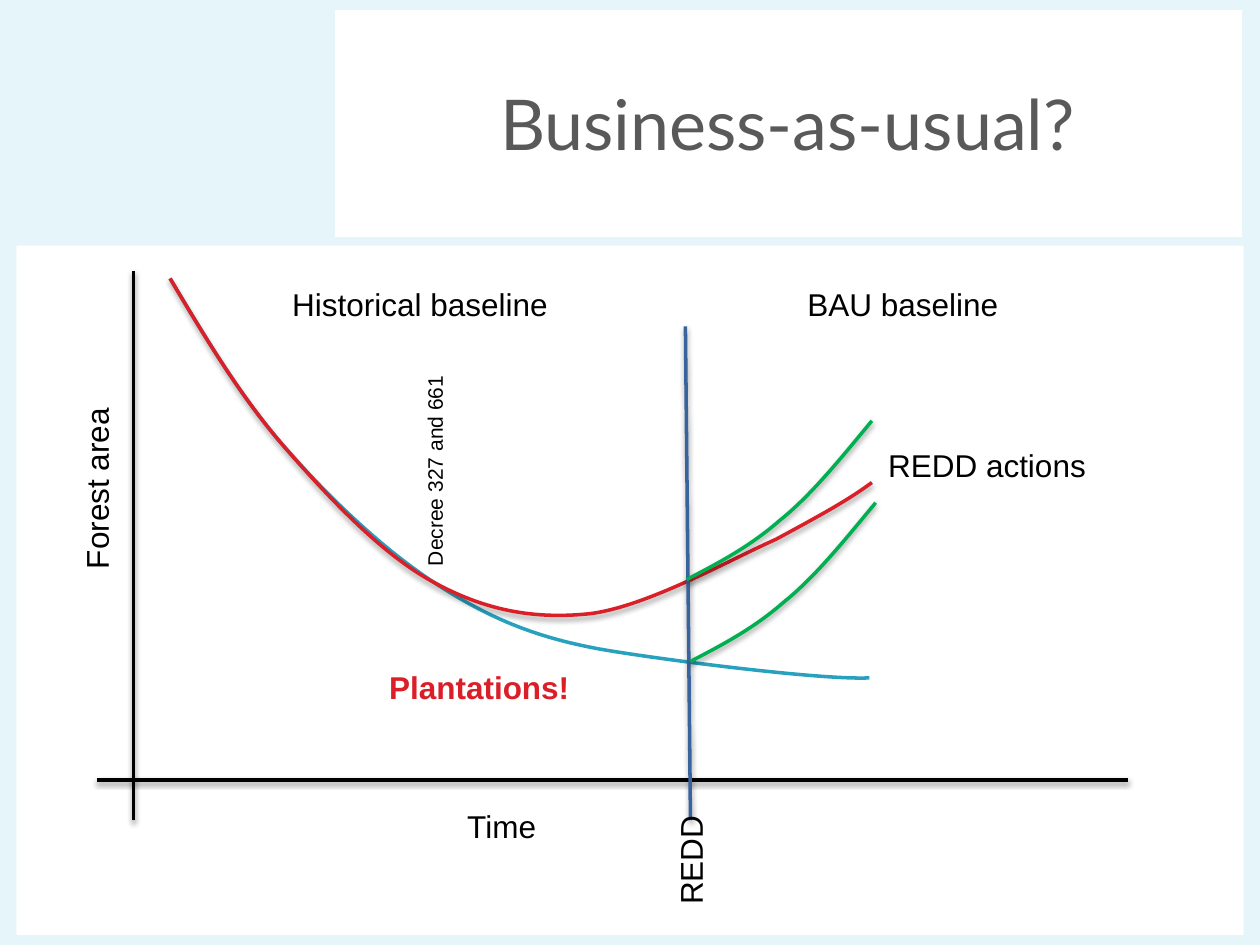
from lxml.etree import SubElement
from pptx import Presentation
from pptx.dml.color import RGBColor as Rgb
from pptx.enum.shapes import MSO_CONNECTOR as Connector, MSO_SHAPE as Preset
from pptx.enum.text import MSO_ANCHOR as Anchor, MSO_AUTO_SIZE as AutoSize, PP_ALIGN as Align
from pptx.oxml import parse_xml
from pptx.oxml.ns import nsdecls, qn
from pptx.util import Inches, Pt

THEME = {
    "background": Rgb.from_string("E5F5FA"),
    "panel": Rgb.from_string("FFFFFF"),
    "axis": Rgb.from_string("000000"),
    "forest": Rgb.from_string("28A1BE"),
    "plantation": Rgb.from_string("DA1F28"),
    "redd_start": Rgb.from_string("39639D"),
    "redd_action": Rgb.from_string("00B050"),
    "stroke": Pt(2),
    "title": ({"name": "Lato", "size": Pt(40)}, Rgb.from_string("595959")),
    "label": ({"name": "Arial", "size": Pt(18)}, Rgb.from_string("000000")),
    "note": ({"name": "Arial", "size": Pt(12)}, Rgb.from_string("000000")),
    "alert": ({"name": "Arial", "size": Pt(18), "bold": True}, Rgb.from_string("DA1F28")),
}
SHADOW = ('<a:outerShdw blurRad="40000" dist="20000" dir="5400000" rotWithShape="0">'
          '<a:srgbClr val="000000"><a:alpha val="38000"/></a:srgbClr></a:outerShdw>')

prs = Presentation()
prs.slide_width, prs.slide_height = Inches(10), Inches(7.5)
CELL = prs.slide_width / 100  # square grid: 100 columns by 75 rows


def grid(*cells):
    return [round(cell * CELL) for cell in cells]


def style_stroke(stroke, color, shadow=SHADOW):
    """Colour a line or curve and give it the soft shadow, or none."""
    stroke.line.color.rgb = THEME[color]
    stroke.line.width = THEME["stroke"]
    stroke._element.spPr.append(
        parse_xml(f'<a:effectLst {nsdecls("a")}>{shadow}</a:effectLst>'))


slide = prs.slides.add_slide(prs.slide_layouts[6])
slide.background.fill.solid()
slide.background.fill.fore_color.rgb = THEME["background"]
shapes = slide.shapes

for panel_box in [(1.3, 19.5, 97.4, 54.7), (26.6, 0.8, 72, 18)]:
    panel = shapes.add_shape(Preset.RECTANGLE, *grid(*panel_box))
    panel.shadow.inherit = False
    panel.fill.solid()
    panel.fill.fore_color.rgb = THEME["panel"]
    panel.line.fill.background()

# Each curve is a start point, then two control points and an end point per segment.
history = [(13.5, 22.1), (16.3, 26.8), (19.1, 31.5), (22.6, 35.5)]
forest_decline = history + [
    (26.1, 39.5), (30.3, 43.5), (34.4, 46.2),
    (38.4, 48.8), (41.9, 50.4), (47, 51.4), (49.9, 52), (64.7, 54), (69, 53.8)]
plantation_growth = history + [
    (26.1, 39.5), (30.3, 44), (34.4, 46.2), (38.4, 48.4), (42.3, 49.2), (46.9, 48.7),
    (51.4, 48.1), (57.8, 44.5), (61.6, 42.8), (65.3, 40.8), (67.3, 39.7), (69.2, 38.3)]
redd_effect = [(0, 0), (2.5, -1.3), (5, -2.6), (7.4, -4.7),
               (9.9, -6.7), (12.3, -9.7), (14.7, -12.6)]
redd_upper, redd_lower = ([(x + dx, y + dy) for dx, dy in redd_effect]
                          for x, y in [(54.5, 46), (54.8, 52.5)])

strokes = [
    ("curve", forest_decline, "forest", ""),
    ("line", [(10.6, 21.5), (10.6, 65.1)], "axis", SHADOW),
    ("line", [(7.7, 61.9), (89.5, 61.9)], "axis", SHADOW),
    ("curve", plantation_growth, "plantation", SHADOW),
    ("line", [(54.4, 25.9), (54.8, 65.1)], "redd_start", SHADOW),
    ("curve", redd_upper, "redd_action", SHADOW),
    ("curve", redd_lower, "redd_action", SHADOW),
]
for kind, points, color, shadow in strokes:
    start, *others = [grid(*point) for point in points]
    if kind == "line":
        stroke = shapes.add_connector(Connector.STRAIGHT, *start, *others[0])
    else:
        builder = shapes.build_freeform(*start)
        builder.add_line_segments(others, close=False)
        stroke = builder.convert_to_shape()
        stroke.fill.background()
        # Every three straight segments become one Bezier segment.
        straights = stroke._element.xpath(".//a:lnTo")
        outline = straights[0].getparent()
        for first in range(0, len(straights), 3):
            bezier = SubElement(outline, qn("a:cubicBezTo"))
            for straight in straights[first:first + 3]:
                bezier.append(straight[0])
                outline.remove(straight)
    style_stroke(stroke, color, shadow)

captions = [
    ("Business-as-usual?", (26.7, 1.4, 71.6, 16.7), "title", 0),
    ("REDD", (50.2, 66.2, 9.2, 4), "label", 270),
    ("Decree 327 and 661", (25.9, 35.8, 17.2, 3), "note", 270),
    ("Forest area", (0.2, 36.7, 14.9, 4), "label", 270),
    ("Time", (36.1, 63.6, 7.5, 4), "label", 0),
    ("Plantations!", (29.9, 52.5, 16.5, 4), "alert", 0),
    ("REDD actions", (69.5, 34.9, 17.9, 4), "label", 0),
    ("Historical baseline", (22.2, 22.1, 22.5, 4), "label", 0),
    ("BAU baseline", (63.1, 22.1, 17.3, 4), "label", 0),
]
for wording, box, role, rotation in captions:
    caption = shapes.add_textbox(*grid(*box))
    caption.rotation = rotation
    is_title = role == "title"
    frame = caption.text_frame
    frame.word_wrap = is_title
    frame.auto_size = AutoSize.NONE if is_title else AutoSize.SHAPE_TO_FIT_TEXT
    frame.vertical_anchor = Anchor.MIDDLE if is_title else Anchor.TOP
    paragraph = frame.paragraphs[0]
    paragraph.alignment = Align.CENTER if is_title else Align.LEFT
    run = paragraph.add_run()
    run.text = wording
    font_format, text_color = THEME[role]
    for attribute, value in font_format.items():
        setattr(run.font, attribute, value)
    run.font.color.rgb = text_color

prs.save("out.pptx")
